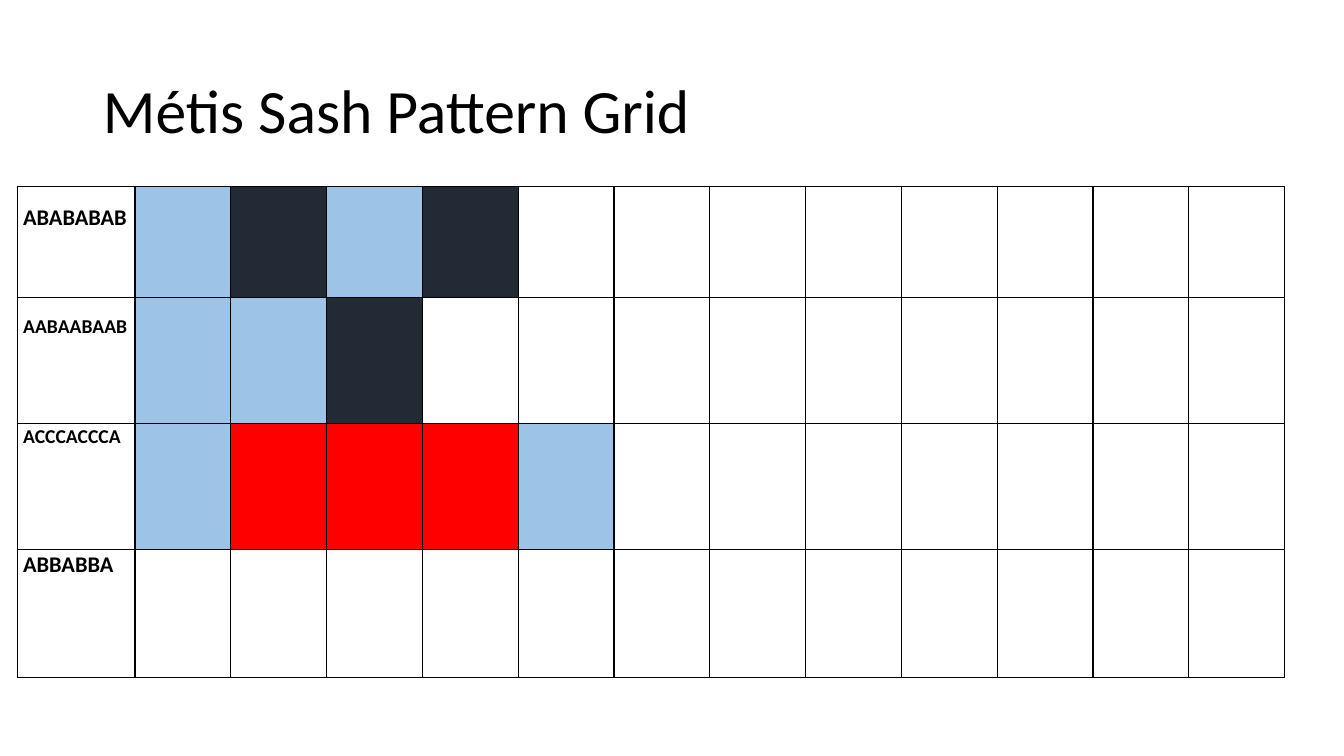
from pptx import Presentation
from pptx.dml.color import RGBColor
from pptx.enum.text import MSO_ANCHOR
from pptx.oxml import parse_xml
from pptx.oxml.ns import nsdecls
from pptx.util import Inches, Pt

BLACK = RGBColor(0x00, 0x00, 0x00)
BLUE = RGBColor(0x9D, 0xC3, 0xE6)
NAVY = RGBColor(0x22, 0x2A, 0x35)
RED = RGBColor(0xFF, 0x00, 0x00)
YARN = {"A": BLUE, "B": NAVY, "C": RED}

# label, shown start of the pattern, text size, row height, space above label
ROWS = [
    ("ABABABAB", "ABAB", 16, 1.1, 0.16),
    ("AABAABAAB", "AAB", 14, 1.25, 0.16),
    ("ACCCACCCA", "ACCCA", 14, 1.25, 0),
    ("ABBABBA", "", 16, 1.27, 0),
]
LABEL_W, CELL_W, CELLS = 1.17, 0.95, 12


def write(frame, text, size, bold=False, spacing=1.0):
    para = frame.paragraphs[0]
    para.line_spacing = spacing
    run = para.add_run()
    run.text = text
    font = run.font
    font.name, font.size, font.bold = "Calibri", Pt(size), bold
    font.color.rgb = BLACK


def add_title(slide, text):
    title = slide.shapes.title
    title.left, title.top = Inches(0.92), Inches(0.4)
    title.width, title.height = Inches(11.5), Inches(1.45)
    frame = title.text_frame
    frame.word_wrap = True
    frame.vertical_anchor = MSO_ANCHOR.MIDDLE
    write(frame, text, 44, spacing=0.9)
    # The default layout centres its title
    frame.paragraphs[0].alignment = 1


def style_cell(cell, color=None):
    """Give the cell black borders and a fill, or no fill."""
    props = cell._tc.get_or_add_tcPr()
    for side in ("lnL", "lnR", "lnT", "lnB"):
        props.append(parse_xml(
            f'<a:{side} {nsdecls("a")} w="{Pt(1)}"><a:solidFill>'
            f'<a:srgbClr val="{BLACK}"/></a:solidFill></a:{side}>'))
    if color is None:
        cell.fill.background()
    else:
        cell.fill.solid()
        cell.fill.fore_color.rgb = color


def add_label(cell, text, size, gap):
    cell.margin_left = cell.margin_right = Inches(0.06)
    cell.margin_top, cell.margin_bottom = Inches(gap), 0
    write(cell.text_frame, text, size, bold=True, spacing=1.07)


def add_grid(slide):
    width = LABEL_W + CELLS * CELL_W
    height = sum(row[3] for row in ROWS)
    table = slide.shapes.add_table(
        len(ROWS), CELLS + 1, Inches(0.17), Inches(1.85),
        Inches(width), Inches(height)).table
    table.first_row = table.horz_banding = False
    for i, col in enumerate(table.columns):
        col.width = Inches(CELL_W if i else LABEL_W)
    for r, (label, shown, size, tall, gap) in enumerate(ROWS):
        table.rows[r].height = Inches(tall)
        colors = [None] + [YARN[key] for key in shown]
        colors += [None] * (CELLS - len(shown))
        for c, color in enumerate(colors):
            style_cell(table.cell(r, c), color)
        add_label(table.cell(r, 0), label, size, gap)


def main():
    prs = Presentation()
    prs.slide_width, prs.slide_height = Inches(13.33), Inches(7.5)
    slide = prs.slides.add_slide(prs.slide_layouts[5])
    add_title(slide, "Métis Sash Pattern Grid")
    add_grid(slide)
    prs.save("out.pptx")


if __name__ == "__main__":
    main()
